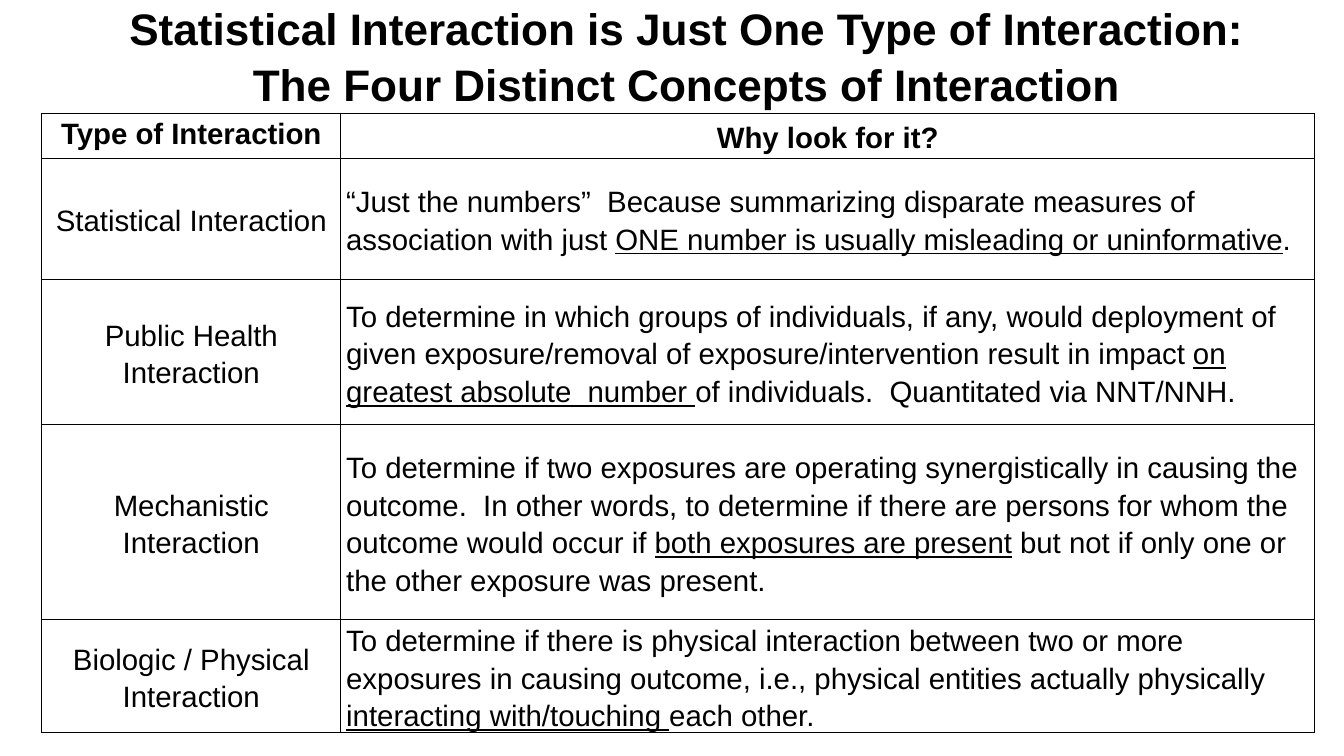
import pptx
import pptx.dml.color
import pptx.enum.text
import pptx.oxml
import pptx.util
from pptx.util import Inches

ALIGN = pptx.enum.text.PP_ALIGN
ANCHOR = pptx.enum.text.MSO_ANCHOR
BLACK = "000000"
TITLE = (
    "Statistical Interaction is Just One Type of Interaction:\v"
    "The Four Distinct Concepts of Interaction"
)
COL_WIDTHS = [3.96, 12.88]
ROW_HEIGHTS = [0.59, 1.61, 1.92, 2.58, 1.36]
ROWS = [
    ("Type of Interaction", ["Why look for it?"]),
    ("Statistical Interaction", [
        "“Just the numbers”  Because summarizing disparate measures of association with just ",
        "ONE number is usually misleading or uninformative",
        ".",
    ]),
    ("Public Health Interaction", [
        "To determine in which groups of individuals, if any, would deployment of given "
        "exposure/removal of exposure/intervention result in impact ",
        "on greatest absolute  number ",
        "of individuals.  Quantitated via NNT/NNH.",
    ]),
    ("Mechanistic Interaction", [
        "To determine if two exposures are operating synergistically in causing the outcome.  "
        "In other words, to determine if there are persons for whom the outcome would occur if ",
        "both exposures are present",
        " but not if only one or the other exposure was present.",
    ]),
    ("Biologic / Physical Interaction", [
        "To determine if there is physical interaction between two or more exposures in causing "
        "outcome, i.e., physical entities actually physically ",
        "interacting with/touching ",
        "each other.",
    ]),
]


def color(hex_value):
    return pptx.dml.color.RGBColor.from_string(hex_value)


def format_paragraph(p, size, bold, align, spacing):
    p.alignment = align
    p.line_spacing = spacing
    p.font.name = "Arial"
    p.font.size = pptx.util.Pt(size)
    p.font.bold = bold
    p.font.color.rgb = color(BLACK)


def add_title(s, text):
    sp = s.shapes.title
    sp.left, sp.top, sp.width, sp.height = map(Inches, (0.39, 0.13, 17.38, 1.38))
    tf = sp.text_frame
    tf.auto_size = pptx.enum.text.MSO_AUTO_SIZE.NONE
    tf.vertical_anchor = ANCHOR.BOTTOM
    p = tf.paragraphs[0]
    p.text = text
    format_paragraph(p, 42, True, ALIGN.CENTER, 1.05)


def set_borders(cell):
    tc_pr = cell._tc.get_or_add_tcPr()
    for index, side in enumerate(("lnL", "lnR", "lnT", "lnB")):
        line = pptx.oxml.parse_xml(
            f'<a:{side} xmlns:a="http://schemas.openxmlformats.org/drawingml/2006/main" w="12700">'
            f'<a:solidFill><a:srgbClr val="{BLACK}"/></a:solidFill></a:{side}>'
        )
        tc_pr.insert(index, line)


def fill_cell(cell, parts, bold, align, anchor):
    cell.fill.background()
    set_borders(cell)
    cell.margin_left = cell.margin_right = Inches(0.07)
    cell.margin_top = cell.margin_bottom = 0
    cell.vertical_anchor = anchor
    p = cell.text_frame.paragraphs[0]
    format_paragraph(p, 28, bold, align, 1.15)
    for index, part in enumerate(parts):
        r = p.add_run()
        r.text = part
        if index == 1:
            r.font.underline = True


def add_interaction_table(s):
    frame = s.shapes.add_table(
        len(ROWS), len(COL_WIDTHS), Inches(0.55), Inches(1.5),
        Inches(sum(COL_WIDTHS)), Inches(sum(ROW_HEIGHTS)),
    )
    table = frame.table
    for column, width in zip(table.columns, COL_WIDTHS):
        column.width = Inches(width)
    for row, height in zip(table.rows, ROW_HEIGHTS):
        row.height = Inches(height)
    for index, (kind, reason) in enumerate(ROWS):
        header = index == 0
        fill_cell(table.cell(index, 0), [kind], header, ALIGN.CENTER,
                  ANCHOR.TOP if header else ANCHOR.MIDDLE)
        fill_cell(table.cell(index, 1), reason, header,
                  ALIGN.CENTER if header else ALIGN.LEFT, ANCHOR.MIDDLE)


def main():
    prs = pptx.Presentation()
    prs.slide_width, prs.slide_height = Inches(17.78), Inches(10)
    s = prs.slides.add_slide(prs.slide_layouts[5])
    add_title(s, TITLE)
    add_interaction_table(s)
    prs.save("out.pptx")


if __name__ == "__main__":
    main()
